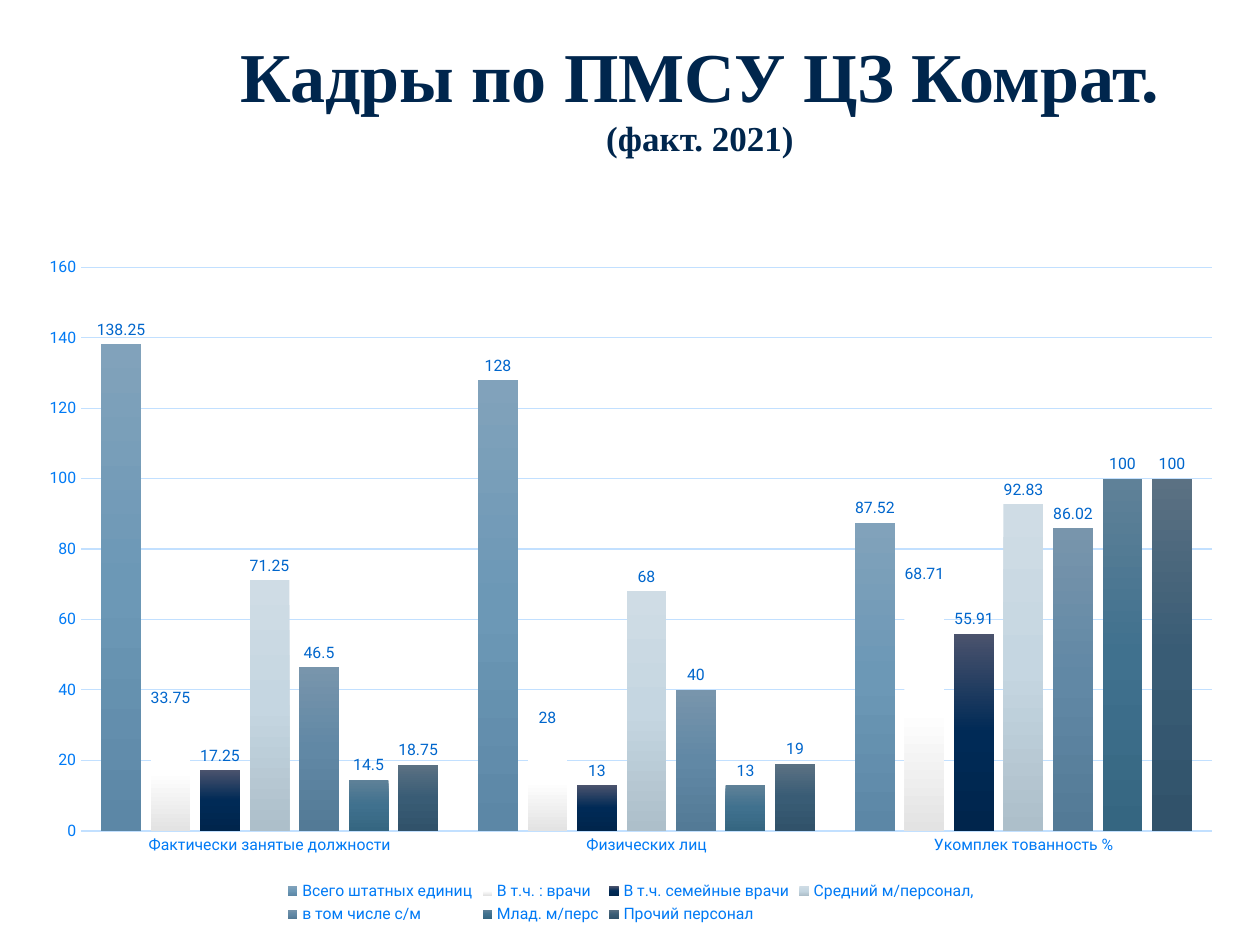
from copy import deepcopy
from dataclasses import dataclass

from pptx import Presentation
from pptx.chart.data import CategoryChartData
from pptx.dml.color import RGBColor
from pptx.enum.chart import XL_CHART_TYPE, XL_LABEL_POSITION, XL_LEGEND_POSITION, XL_TICK_MARK
from pptx.enum.text import MSO_ANCHOR, MSO_AUTO_SIZE, PP_ALIGN
from pptx.oxml.ns import qn
from pptx.util import Cm, Pt


@dataclass(frozen=True)
class Theme:
    title_font: str = "Times New Roman"
    chart_font: str = "Roboto"
    title_color: str = "00264D"
    chart_color: str = "003366"
    axis_color: str = "007AF5"
    label_color: str = "0066CC"
    grid_color: str = "C2E0FF"
    title_size: int = 40
    subtitle_size: int = 20
    chart_size: int = 10
    small_size: int = 9


THEME = Theme()
CATEGORIES = ["Фактически занятые должности", "Физических лиц", "Укомплек тованность %"]
# Series name, values, gradient from top to bottom
STAFF = [
    ("Всего штатных единиц", (138.25, 128, 87.52), ("81A2BB", "6C98B6", "5C87A6")),
    ("В т.ч. : врачи", (33.75, 28, 68.71), ("FFFFFF", "FFFFFF", "E3E3E3")),
    ("В т.ч. семейные врачи", (17.25, 13, 55.91), ("4B536D", "002A56", "00254C")),
    ("Средний м/персонал,", (71.25, 68, 92.83), ("CFDCE5", "C5D6E1", "ADBFCA")),
    ("в том числе с/м", (46.5, 40, 86.02), ("7895AC", "6188A5", "537A96")),
    ("Млад. м/перс", (14.5, 13, 100), ("5F8198", "40718E", "356681")),
    ("Прочий персонал", (18.75, 19, 100), ("5B7183", "395C75", "31526A")),
]


def style_font(font, name, size, color):
    font.name = name
    font.size = Pt(size)
    font.color.rgb = RGBColor.from_string(color)


def style_line(line, color, width):
    line.color.rgb = RGBColor.from_string(color)
    line.width = Pt(width)


def place_title(slide, left, top, width, height):
    title = slide.shapes.title
    title.left, title.top, title.width, title.height = left, top, width, height
    frame = title.text_frame
    frame.word_wrap = True
    frame.auto_size = MSO_AUTO_SIZE.NONE
    frame.vertical_anchor = MSO_ANCHOR.MIDDLE
    paragraph = frame.paragraphs[0]
    paragraph.alignment = PP_ALIGN.CENTER
    style_font(paragraph.font, THEME.title_font, THEME.title_size, THEME.title_color)
    paragraph.font.bold = True
    paragraph.add_run().text = "Кадры по ПМСУ ЦЗ Комрат."
    paragraph.add_line_break()
    subtitle = paragraph.add_run()
    subtitle.text = "(факт. 2021)"
    subtitle.font.size = Pt(THEME.subtitle_size)


def style_series(series, colors):
    # Vertical gradient with a third stop added to the default two
    fill = series.format.fill
    fill.gradient()
    fill.gradient_angle = 270
    stop_list = series._element.find(".//" + qn("a:gsLst"))
    stop_list.append(deepcopy(stop_list[0]))
    for stop, position, color in zip(fill.gradient_stops, (0, 0.5, 1), colors):
        stop.position = position
        stop.color.rgb = RGBColor.from_string(color)
    series.format.line.fill.background()
    series.invert_if_negative = False

    labels = series.data_labels
    labels.show_value = True
    labels.position = XL_LABEL_POSITION.OUTSIDE_END
    style_font(labels.font, THEME.chart_font, THEME.small_size, THEME.label_color)


def place_staff_chart(slide, left, top, width, height):
    data = CategoryChartData()
    data.categories = CATEGORIES
    for name, values, _ in STAFF:
        data.add_series(name, values)
    chart = slide.shapes.add_chart(
        XL_CHART_TYPE.COLUMN_CLUSTERED, left, top, width, height, data
    ).chart
    chart.has_title = False
    style_font(chart.font, THEME.chart_font, THEME.chart_size, THEME.chart_color)

    # Columns
    plot = chart.plots[0]
    plot.gap_width = 100
    plot.overlap = -24
    plot.vary_by_categories = False
    for series, (_, _, colors) in zip(plot.series, STAFF):
        style_series(series, colors)

    # Axes and gridlines
    for axis in (chart.category_axis, chart.value_axis):
        axis.major_tick_mark = axis.minor_tick_mark = XL_TICK_MARK.NONE
        style_font(axis.tick_labels.font, THEME.chart_font, THEME.small_size, THEME.axis_color)
    style_line(chart.category_axis.format.line, THEME.grid_color, 1)
    value_axis = chart.value_axis
    value_axis.minimum_scale, value_axis.maximum_scale, value_axis.major_unit = 0, 160, 20
    value_axis.format.line.fill.background()
    style_line(value_axis.major_gridlines.format.line, THEME.grid_color, 0.75)

    # Legend
    chart.has_legend = True
    chart.legend.position = XL_LEGEND_POSITION.BOTTOM
    chart.legend.include_in_layout = False
    style_font(chart.legend.font, THEME.chart_font, THEME.small_size, THEME.axis_color)


def main():
    presentation = Presentation()
    presentation.slide_width, presentation.slide_height = Cm(25.4), Cm(19.05)
    slide = presentation.slides.add_slide(presentation.slide_layouts.get_by_name("Title Only"))
    place_title(slide, Cm(4.09), Cm(0.33), Cm(20.04), Cm(3.2))
    place_staff_chart(slide, Cm(0.51), Cm(4.93), Cm(24.41), Cm(13.79))
    presentation.save("out.pptx")


if __name__ == "__main__":
    main()
